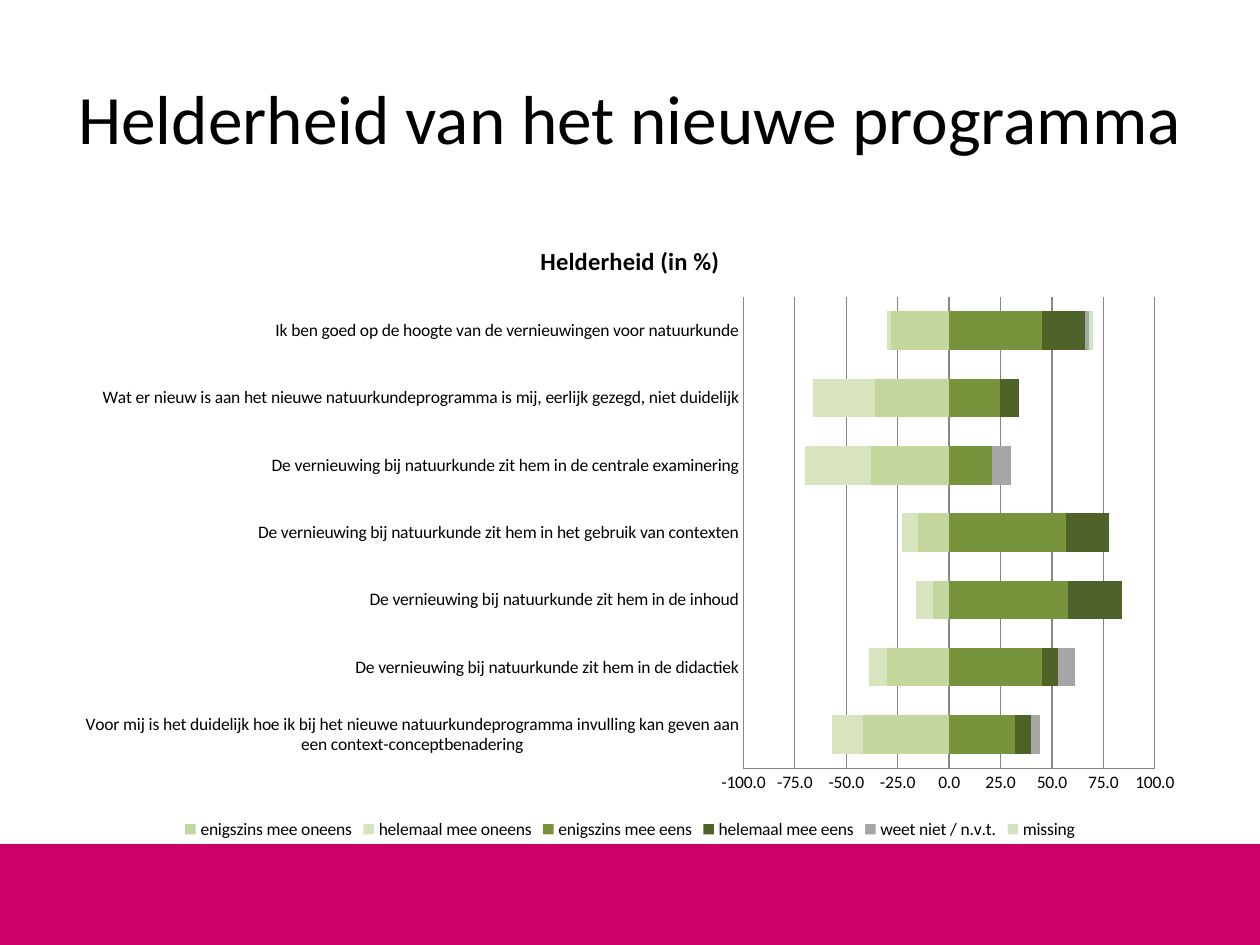
from pptx import Presentation
from pptx import util as u
from pptx.chart import data as cd
from pptx.dml.color import RGBColor
from pptx.enum import chart as ch, shapes, text

COLORS = {
    "text": "000000", "band": "CC0066", "axis": "868686",
    "enigszins mee oneens": "C3D69B", "helemaal mee oneens": "D7E4BD",
    "enigszins mee eens": "77933C", "helemaal mee eens": "4F6228",
    "weet niet / n.v.t.": "A6A6A6", "missing": "D5E3C5",
}
CATEGORIES = [
    "Voor mij is het duidelijk hoe ik bij het nieuwe natuurkundeprogramma "
    "invulling kan geven aan een context-conceptbenadering",
    "De vernieuwing bij natuurkunde zit hem in de didactiek",
    "De vernieuwing bij natuurkunde zit hem in de inhoud",
    "De vernieuwing bij natuurkunde zit hem in het gebruik van contexten",
    "De vernieuwing bij natuurkunde zit hem in de centrale examinering",
    "Wat er nieuw is aan het nieuwe natuurkundeprogramma is mij, eerlijk gezegd, niet duidelijk",
    "Ik ben goed op de hoogte van de vernieuwingen voor natuurkunde",
]
SERIES = {
    "enigszins mee oneens": [-42, -30, -8, -15, -38, -36, -28],
    "helemaal mee oneens": [-15, -9, -8, -8, -32, -30, -2],
    "enigszins mee eens": [32, 45, 58, 57, 21, 25, 45],
    "helemaal mee eens": [8, 8, 26, 21, None, 9, 21],
    "weet niet / n.v.t.": [4, 8, None, None, 9, None, 2],
    "missing": [None] * 6 + [2],
}


class Deck:
    """Style and current slide, with one method per kind of element."""

    def __init__(self, width, height, font="Calibri"):
        self.prs = Presentation()
        self.prs.slide_width, self.prs.slide_height = u.Pt(width), u.Pt(height)
        self.s = self.prs.slides.add_slide(self.prs.slide_layouts[6])
        self.font = font

    def color(self, name):
        return RGBColor.from_string(COLORS[name])

    def apply(self, obj, **values):
        for key, value in values.items():
            setattr(obj, key, value)

    def style(self, font, size, bold=False):
        self.apply(font, name=self.font, size=u.Pt(size), bold=bold)
        font.color.rgb = self.color("text")

    def paint(self, fmt, name):
        fmt.fill.solid()
        fmt.fill.fore_color.rgb = self.color(name)

    def band(self, box, name):
        sp = self.s.shapes.add_shape(shapes.MSO_SHAPE.RECTANGLE, *map(u.Pt, box))
        sp.shadow.inherit = False
        self.paint(sp, name)
        sp.line.fill.background()

    def title(self, box, words, size):
        tf = self.s.shapes.add_textbox(*map(u.Pt, box)).text_frame
        self.apply(tf, word_wrap=True, vertical_anchor=text.MSO_ANCHOR.MIDDLE)
        p = tf.paragraphs[0]
        p.alignment = text.PP_ALIGN.CENTER
        r = p.add_run()
        r.text = words
        self.style(r.font, size)

    def bar_chart(self, box, heading, categories, series):
        data = cd.CategoryChartData()
        data.categories = categories
        for name, values in series.items():
            data.add_series(name, values)
        chart = self.s.shapes.add_chart(
            ch.XL_CHART_TYPE.BAR_STACKED, *map(u.Pt, box), data).chart
        self.style(chart.font, 10)
        self.apply(chart, has_title=True, has_legend=True)
        tf = chart.chart_title.text_frame
        tf.text = heading
        self.style(tf.paragraphs[0].runs[0].font, 14, True)
        self.apply(chart.legend, position=ch.XL_LEGEND_POSITION.BOTTOM,
                   include_in_layout=False)
        plot = chart.plots[0]
        self.apply(plot, gap_width=75, overlap=100, vary_by_categories=False)
        for item in plot.series:
            self.paint(item.format, item.name)
            item.invert_if_negative = False
        self.axes(chart)

    def axes(self, chart):
        none = ch.XL_TICK_MARK.NONE
        cat, val = chart.category_axis, chart.value_axis
        for axis in (cat, val):
            self.apply(axis, major_tick_mark=none, minor_tick_mark=none,
                       tick_label_position=ch.XL_TICK_LABEL_POSITION.NEXT_TO_AXIS)
        self.apply(val, minimum_scale=-100, maximum_scale=100, major_unit=25,
                   has_major_gridlines=True, crosses=ch.XL_AXIS_CROSSES.MINIMUM)
        self.apply(val.tick_labels, number_format="###0.0",
                   number_format_is_linked=False)
        for fmt in (cat.format, val.format, val.major_gridlines.format):
            fmt.line.color.rgb = self.color("axis")
            fmt.line.width = u.Pt(0.75)


def main():
    deck = Deck(720, 540)
    deck.band((0, 482.4, 720, 57.6), "band")
    deck.title((36, 21.6, 648, 90), "Helderheid van het nieuwe programma", 39.6)
    deck.bar_chart((36, 126, 648, 356.4), "Helderheid (in %)", CATEGORIES, SERIES)
    deck.prs.save("out.pptx")


if __name__ == "__main__":
    main()
